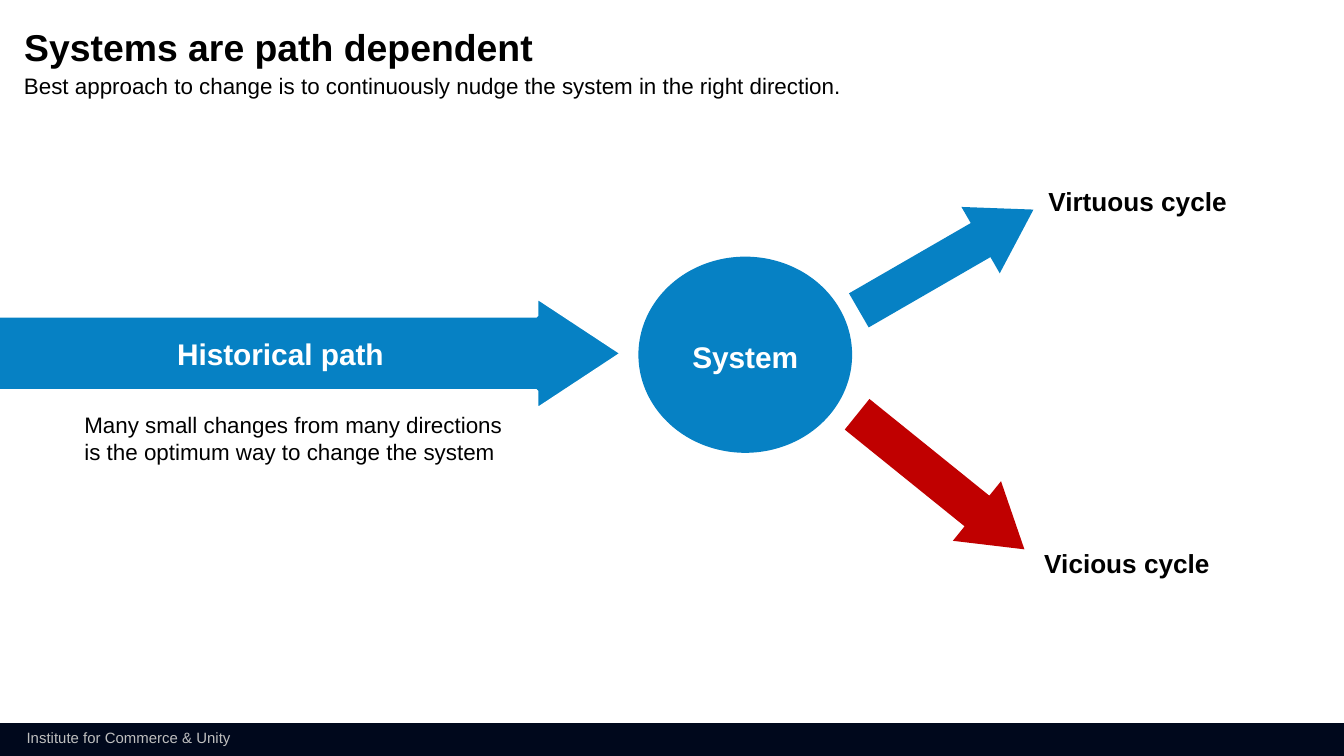
from pptx import Presentation
from pptx.dml.color import RGBColor
from pptx.enum.shapes import MSO_SHAPE as Shape
from pptx.enum.text import MSO_ANCHOR as Anchor, PP_ALIGN as Align
from pptx.util import Inches, Pt

COLORS = {"blue": "0681C4", "red": "C00000", "navy": "00081C",
          "gray": "BFBFBF", "black": "000000", "white": "FFFFFF"}
FONT = "Arial"
PADDING = (0.1, 0.05, 0.1, 0.05)
DIAGONAL = (0.513, 0.796)

SHAPES = {
    "footer": (Shape.RECTANGLE, (0, 5.38, 10, 0.25), "navy", {}),
    "history": (Shape.RIGHT_ARROW, (-0.03, 2.21, 4.66, 0.84), "blue",
                {"adjust": (0.666, 0.759), "line": "white"}),
    "vicious": (Shape.RIGHT_ARROW, (6.2, 3.3, 1.6, 0.57), "red",
                {"adjust": DIAGONAL, "turn": 38.9}),
    "system": (Shape.OVAL, (4.75, 1.91, 1.59, 1.46), "blue", {}),
    "virtuous": (Shape.RIGHT_ARROW, (6.29, 1.65, 1.5, 0.57), "blue",
                 {"adjust": DIAGONAL, "turn": 330}),
}
TEXTS = [
    ("Institute for Commerce & Unity", (0.1, 5.37, 1.8, 0.24),
     {"size": 8, "color": "gray", "insets": PADDING}),
    ("Best approach to change is to continuously nudge the system in the right direction.",
     (0.08, 0.49, 7.75, 0.3), {"size": 12, "insets": PADDING}),
    ("Systems are path dependent", (0.18, 0.22, 4.83, 0.3),
     {"size": 20, "bold": True, "spacing": 0.9}),
    ("Many small changes from many directions is the optimum way to change the system",
     (0.53, 3.01, 3.36, 0.5), {"size": 12, "insets": PADDING}),
    ("Vicious cycle", (7.77, 4.07, 1.24, 0.24),
     {"size": 14, "bold": True, "wrap": False}),
    ("Virtuous cycle", (7.8, 1.38, 1.67, 0.24), {"size": 14, "bold": True}),
    ("System", (4.75, 2.52, 1.59, 0.27),
     {"size": 16, "bold": True, "color": "white", "align": Align.CENTER}),
]


def rgb(name):
    return RGBColor.from_string(COLORS[name])


def write(frame, text, size, color="black", bold=False, align=Align.LEFT,
          insets=(0, 0, 0, 0), wrap=True, spacing=None, anchor=Anchor.TOP):
    frame.word_wrap = wrap
    frame.vertical_anchor = anchor
    (frame.margin_left, frame.margin_top,
     frame.margin_right, frame.margin_bottom) = map(Inches, insets)
    para = frame.paragraphs[0]
    para.alignment = align
    para.line_spacing = spacing
    span = para.add_run()
    span.text = text
    span.font.name = FONT
    span.font.size = Pt(size)
    span.font.bold = bold
    span.font.color.rgb = rgb(color)


def draw(page, kind, place, fill, adjust=(), turn=0, line=None):
    shape = page.shapes.add_shape(kind, *map(Inches, place))
    shape.shadow.inherit = False
    shape.fill.solid()
    shape.fill.fore_color.rgb = rgb(fill)
    shape.rotation = turn
    for index, value in enumerate(adjust):
        shape.adjustments[index] = value
    if line:
        shape.line.color.rgb = rgb(line)
        shape.line.width = Pt(2)
    else:
        shape.line.fill.background()
    return shape


def main():
    deck = Presentation()
    deck.slide_width = Inches(10)
    deck.slide_height = deck.slide_width * 9 // 16
    page = deck.slides.add_slide(deck.slide_layouts[6])
    drawn = {name: draw(page, kind, place, fill, **style)
             for name, (kind, place, fill, style) in SHAPES.items()}
    write(drawn["history"].text_frame, "Historical path", size=16,
          color="white", bold=True, align=Align.CENTER,
          insets=PADDING, anchor=Anchor.MIDDLE)
    for text, place, style in TEXTS:
        box = page.shapes.add_textbox(*map(Inches, place))
        write(box.text_frame, text, **style)
    deck.save("out.pptx")


if __name__ == "__main__":
    main()
